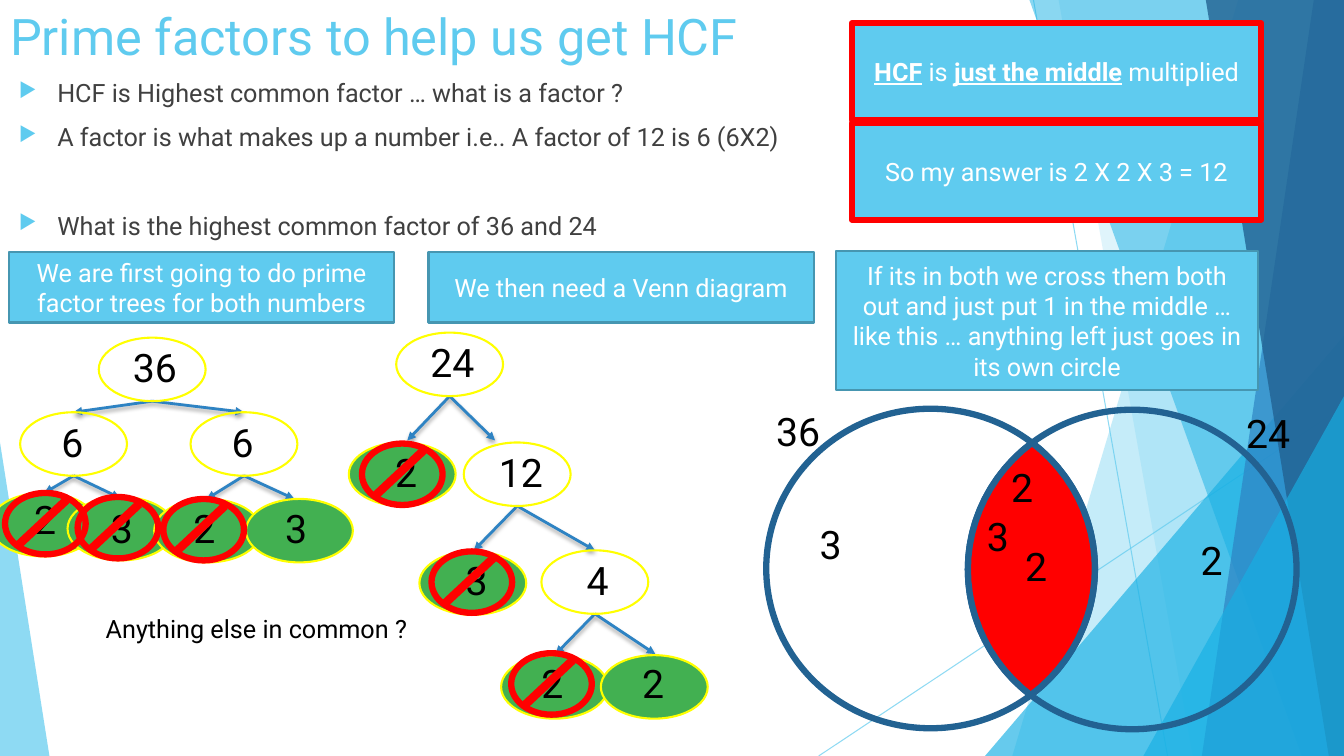
from math import acos, cos, pi, sin

from lxml.etree import SubElement
from pptx import Presentation
from pptx.dml.color import RGBColor
from pptx.enum.shapes import MSO_CONNECTOR, MSO_SHAPE
from pptx.enum.text import MSO_ANCHOR, PP_ALIGN
from pptx.oxml.ns import qn
from pptx.util import Inches, Pt

COLORS = {
    "sky": "5FCBEF", "cyan": "17B0E4", "blue": "2E83C3", "navy": "226292",
    "edge": "4696B1", "yellow": "FFFF00", "green": "42B051", "red": "FF0000",
    "white": "FFFFFF", "black": "000000", "grey": "404040",
}
FONT = "Roboto"
NODE_W, NODE_H = 1.06, 0.63


class SlideBuilder:
    def __init__(self, slide):
        self.slide = slide
        self.shapes = slide.shapes

    def rgb(self, color):
        return RGBColor.from_string(COLORS[color])

    def style_runs(self, paragraph, size, color):
        for run in paragraph.runs:
            run.font.name = FONT
            run.font.size = Pt(size)
            run.font.color.rgb = self.rgb(color)

    def paint(self, shape, fill=None, line=None, width=1.5, opacity=100):
        shape.shadow.inherit = False
        if fill:
            shape.fill.solid()
            shape.fill.fore_color.rgb = self.rgb(fill)
            self.fade(shape, opacity)
        else:
            shape.fill.background()
        if line:
            shape.line.color.rgb = self.rgb(line)
            shape.line.width = Pt(width)
        else:
            shape.line.fill.background()
        return shape

    def fade(self, shape, opacity):
        if opacity < 100:
            color = next(shape._element.spPr.iter(qn("a:srgbClr")))
            SubElement(color, qn("a:alpha"), val=str(opacity * 1000))

    def preset(self, kind, box, **paint):
        shape = self.shapes.add_shape(kind, *map(Inches, box))
        return self.paint(shape, **paint)

    def ellipse(self, box, **paint):
        return self.preset(MSO_SHAPE.OVAL, box, **paint)

    def triangle(self, box, apex, **paint):
        shape = self.preset(MSO_SHAPE.ISOSCELES_TRIANGLE, box, **paint)
        shape.adjustments[0] = apex

    def polygon(self, points, **paint):
        corners = [(Inches(x), Inches(y)) for x, y in points]
        outline = self.shapes.build_freeform(*corners[0])
        outline.add_line_segments(corners[1:], close=True)
        return self.paint(outline.convert_to_shape(), **paint)

    def line(self, start, end, color, width, opacity=100, arrow=False):
        link = self.shapes.add_connector(
            MSO_CONNECTOR.STRAIGHT, *map(Inches, (*start, *end)))
        link.line.color.rgb = self.rgb(color)
        link.line.width = Pt(width)
        self.fade(link, opacity)
        if arrow:
            SubElement(link.line._get_or_add_ln(), qn("a:tailEnd"), type="triangle")
        effects = SubElement(link._element.spPr, qn("a:effectLst"))
        if arrow:
            shadow = SubElement(effects, qn("a:outerShdw"), blurRad=str(Pt(3)),
                                dist=str(Pt(2)), dir="5400000", rotWithShape="0")
            black = SubElement(shadow, qn("a:srgbClr"), val=COLORS["black"])
            SubElement(black, qn("a:alpha"), val="35000")

    def text(self, words, box, size, color="black"):
        frame = self.shapes.add_textbox(*map(Inches, box)).text_frame
        frame.word_wrap = True
        frame.text = words
        for paragraph in frame.paragraphs:
            self.style_runs(paragraph, size, color)
        return frame

    def number(self, value, left, top):
        self.text(value, (left, top, 0.71, 0.57), 28)

    def panel(self, pieces, box, line="edge", width=1.5):
        shape = self.preset(MSO_SHAPE.RECTANGLE, box, fill="sky", line=line, width=width)
        frame = shape.text_frame
        frame.word_wrap = True
        frame.vertical_anchor = MSO_ANCHOR.MIDDLE
        paragraph = frame.paragraphs[0]
        paragraph.alignment = PP_ALIGN.CENTER
        for words, strong in pieces:
            run = paragraph.add_run()
            run.text = words
            run.font.bold = run.font.underline = strong
        self.style_runs(paragraph, 18, "white")

    def title(self, words, box):
        holder = self.shapes.title
        holder.left, holder.top, holder.width, holder.height = map(Inches, box)
        frame = holder.text_frame
        frame.text = words
        frame.vertical_anchor = MSO_ANCHOR.TOP
        frame.paragraphs[0].alignment = PP_ALIGN.LEFT
        self.style_runs(frame.paragraphs[0], 36, "sky")

    def bullets(self, items, box):
        frame = self.text("\n".join(words for words, _ in items), box, 18, "grey")
        for paragraph, (_, gap) in zip(frame.paragraphs, items):
            paragraph.space_before = Pt(gap)
            props = paragraph._p.get_or_add_pPr()
            props.set("marL", str(Inches(0.38)))
            props.set("indent", str(Inches(-0.38)))
            color = SubElement(props, qn("a:buClr"))
            SubElement(color, qn("a:srgbClr"), val=COLORS["sky"])
            SubElement(props, qn("a:buSzPct"), val="80000")
            SubElement(props, qn("a:buChar"), char="▶")

    def node(self, value, left, top, dx, dy, leaf):
        self.ellipse((left, top, NODE_W, NODE_H), line="yellow",
                     fill="green" if leaf else None)
        self.number(value, left + dx, top + dy)

    def cross_out(self, left, top):
        self.line((left + 0.14, top + 0.51), (left + 0.61, top + 0.07), "red", 6)
        self.ellipse((left, top, 0.8, 0.61), line="red", width=4.5)


def lens(left_center, right_center, rx, ry, steps=24):
    """Points around the overlap of two equal ellipses."""
    half = acos((right_center[0] - left_center[0]) / 2 / rx)
    points = []
    for (cx, cy), middle in ((left_center, 0), (right_center, pi)):
        for step in range(steps + 1):
            angle = middle - half + 2 * half * step / steps
            points.append((cx + rx * cos(angle), cy + ry * sin(angle)))
    return points


def main():
    prs = Presentation()
    prs.slide_width, prs.slide_height = Inches(13.33), Inches(7.5)
    page = SlideBuilder(prs.slides.add_slide(prs.slide_layouts[5]))

    # Faceted background
    page.line((10.25, 0), (11.58, 7.5), "sky", 0.75, opacity=70)
    page.line((13.33, 4.03), (8.12, 7.5), "sky", 0.75, opacity=70)

    def facet(top_x, bottom_x, color, opacity):
        page.polygon([(top_x, 0), (13.33, 0), (13.33, 7.5), (bottom_x, 7.5)],
                     fill=color, opacity=opacity)

    facet(12.28, 10.04, "sky", 36)
    facet(10.5, 11.83, "sky", 20)
    page.triangle((9.77, 3.33, 3.56, 4.17), 1, fill="cyan", opacity=66)
    facet(10.21, 12.91, "cyan", 50)
    facet(13.03, 11.92, "blue", 70)
    facet(11.96, 13.18, "navy", 80)
    page.triangle((11.34, 3.93, 1.99, 3.57), 1, fill="cyan", opacity=66)
    page.triangle((0, 4.39, 0.49, 3.11), 0, fill="sky", opacity=70)

    # Title and questions
    page.title("Prime factors to help us get HCF", (0, 0, 9.4, 1.44))
    page.bullets([
        ("HCF is Highest common factor … what is a factor ?", 10),
        ("A factor is what makes up a number i.e.. A factor of 12 is 6 (6X2)", 10),
        ("What is the highest common factor of 36 and 24", 41.4),
    ], (0.09, 0.72, 9.4, 4.24))

    # Factor trees: arrows run from the foot of a parent to each child
    for start, ends in [
        ((1.51, 3.98), [(0.73, 4.09), (2.42, 4.09)]),
        ((0.73, 4.72), [(0.44, 4.89), (1.19, 4.94)]),
        ((2.42, 4.72), [(2.05, 4.95), (2.92, 4.95)]),
        ((4.46, 3.93), [(4.04, 4.37), (4.91, 4.37)]),
        ((5.13, 5.02), [(4.7, 5.46), (5.9, 5.46)]),
        ((5.9, 6.09), [(5.51, 6.49), (6.5, 6.49)]),
    ]:
        for end in ends:
            page.line(start, end, "blue", 2, arrow=True)
    for value, left, top, dx, dy, leaf in [
        ("36", 0.98, 3.35, 0.24, 0.01, False), ("6", 0.2, 4.09, 0.31, 0.01, False),
        ("6", 1.89, 4.09, 0.31, 0.01, False), ("2", -0.1, 4.89, 0.34, -0.03, True),
        ("3", 0.67, 4.93, 0.33, 0.02, True), ("2", 1.53, 4.95, 0.29, 0, True),
        ("3", 2.44, 4.95, 0.29, 0, True), ("24", 3.93, 3.3, 0.24, 0.01, False),
        ("2", 3.46, 4.39, 0.36, 0.01, True), ("12", 4.6, 4.39, 0.25, 0.01, False),
        ("3", 4.16, 5.47, 0.36, 0, True), ("4", 5.37, 5.46, 0.35, 0.01, False),
        ("2", 4.97, 6.5, 0.3, -0.01, True), ("2", 5.96, 6.5, 0.31, -0.01, True),
    ]:
        page.node(value, left, top, dx, dy, leaf)

    # Steps and answer
    for words, box in [
        ("We are first going to do prime factor trees for both numbers",
         (0.09, 2.5, 3.82, 0.7)),
        ("We then need a Venn diagram", (4.25, 2.5, 3.82, 0.7)),
        ("If its in both we cross them both out and just put 1 in the middle … "
         "like this … anything left just goes in its own circle",
         (8.29, 2.49, 4.19, 1.38)),
    ]:
        page.panel([(words, False)], box)
    page.panel([("HCF", True), (" is ", False), ("just the middle", True),
                (" multiplied", False)], (8.45, 0.23, 4.06, 0.96), "red", 4.5)
    page.panel([("So my answer is 2 X 2 X 3 = 12", False)],
               (8.45, 1.22, 4.06, 0.96), "red", 4.5)

    # Venn diagram
    rx, ry = 1.63, 1.585
    centers = [(9.23, 5.64), (11.23, 5.65)]
    for cx, cy in centers:
        page.ellipse((cx - rx, cy - ry, 2 * rx, 2 * ry), line="navy", width=4.5)
    page.polygon(lens(*centers, rx, ry), fill="red", line="navy", width=4.5)
    for value, left, top in [
        ("36", 7.6, 3.99), ("24", 12.26, 4.01), ("2", 9.93, 4.55), ("3", 9.69, 5.03),
        ("2", 10.07, 5.33), ("3", 8.03, 5.11), ("2", 11.81, 5.27),
    ]:
        page.number(value, left, top)

    # Shared factors crossed out
    for left, top in [(0.05, 4.89), (0.77, 4.93), (1.62, 4.95),
                      (3.59, 4.4), (4.28, 5.47), (5.07, 6.48)]:
        page.cross_out(left, top)
    page.text("Anything else in common ?", (0.95, 6.04, 3.25, 0.4), 18)

    prs.save("out.pptx")


if __name__ == "__main__":
    main()
